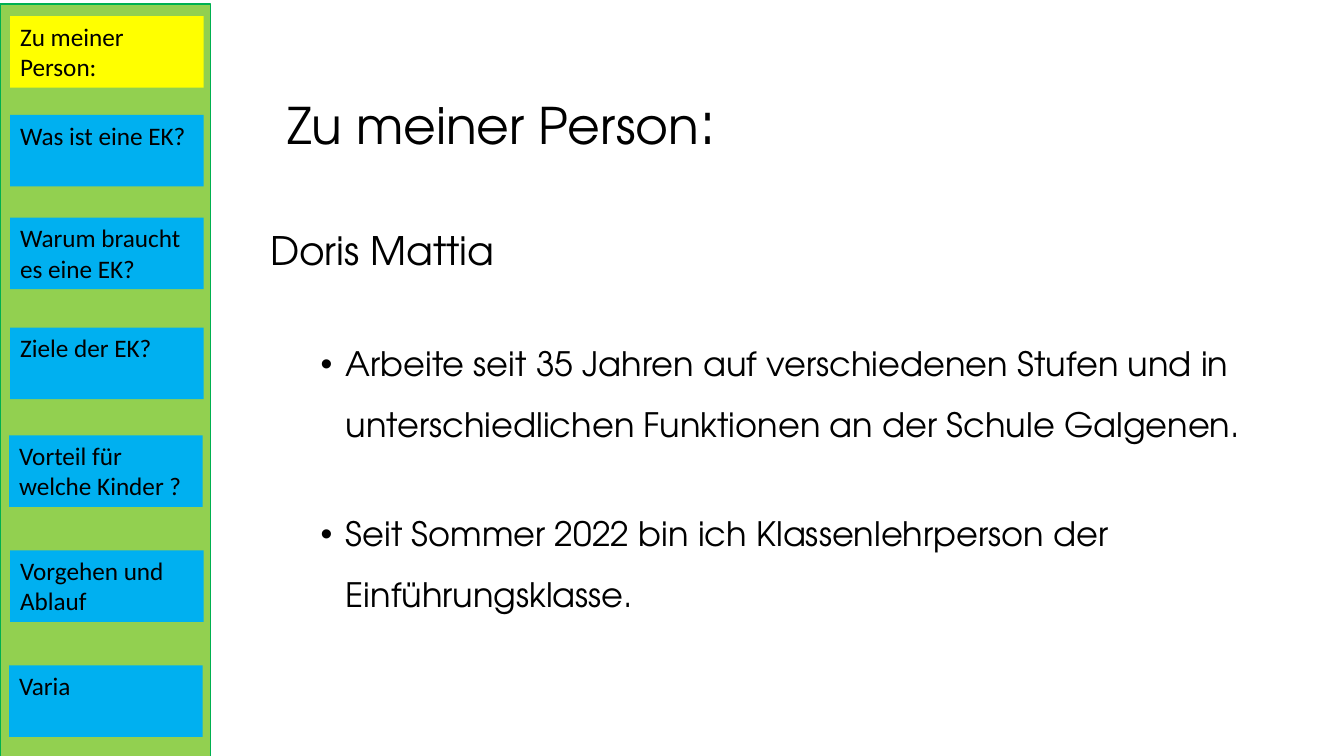
"""Builds the slide that introduces the speaker beside a navigation bar."""
import lxml.etree
import pptx
import pptx.dml.color
import pptx.enum.shapes
import pptx.enum.text
import pptx.oxml.ns
import pptx.util

Inches = pptx.util.Inches
Pt = pptx.util.Pt
RGBColor = pptx.dml.color.RGBColor
ANCHOR = pptx.enum.text.MSO_ANCHOR

BLACK = RGBColor(0x00, 0x00, 0x00)
GREEN = RGBColor(0x92, 0xD0, 0x50)
DARK_GREEN = RGBColor(0x00, 0xB0, 0x50)
YELLOW = RGBColor(0xFF, 0xFF, 0x00)
BLUE = RGBColor(0x00, 0xB0, 0xF0)

HEADING_FONT = "TeX Gyre Adventor"
NAV_FONT = "Calibri"

NAV_ITEMS = [
    ("Zu meiner Person:", 0.1, 0.16),
    ("Was ist eine EK?", 0.1, 1.14),
    ("Warum braucht es eine EK?", 0.1, 2.16),
    ("Ziele der EK?", 0.1, 3.25),
    ("Vorteil für welche Kinder ?", 0.09, 4.32),
    ("Vorgehen und Ablauf", 0.1, 5.46),
    ("Varia", 0.09, 6.6),
]
POINTS = [
    "Arbeite seit 35 Jahren auf verschiedenen Stufen und in "
    "unterschiedlichen Funktionen an der Schule Galgenen.",
    "Seit Sommer 2022 bin ich Klassenlehrperson der Einführungsklasse.",
]


def add_run(p, text, size=18, font=HEADING_FONT, color=BLACK):
    """Append formatted text to a paragraph."""
    r = p.add_run()
    r.text = text
    r.font.size = Pt(size)
    r.font.name = font
    r.font.color.rgb = color


def format_paragraph(p, level=0, spacing=1.0, before=0, bullet=None, left=0, hanging=0):
    """Set level, spacing, indents and bullet of a left-aligned paragraph."""
    p.alignment = pptx.enum.text.PP_ALIGN.LEFT
    p.level = level
    p.line_spacing = spacing
    p.space_before = Pt(before)
    pPr = p._p.get_or_add_pPr()
    pPr.set("marL", str(Inches(left)))
    pPr.set("indent", str(-Inches(hanging)))
    if bullet:
        font = lxml.etree.SubElement(pPr, pptx.oxml.ns.qn("a:buFont"))
        font.set("typeface", "Arial")
        char = lxml.etree.SubElement(pPr, pptx.oxml.ns.qn("a:buChar"))
        char.set("char", bullet)
    else:
        lxml.etree.SubElement(pPr, pptx.oxml.ns.qn("a:buNone"))


def prepare_frame(sp, anchor=ANCHOR.TOP):
    """Return the wrapping, fixed-size text frame of a shape."""
    tf = sp.text_frame
    tf.word_wrap = True
    tf.auto_size = pptx.enum.text.MSO_AUTO_SIZE.NONE
    tf.vertical_anchor = anchor
    return tf


def place(sp, left, top, width, height):
    """Move and size a shape in inches."""
    sp.left, sp.top = Inches(left), Inches(top)
    sp.width, sp.height = Inches(width), Inches(height)


def add_rect(s, left, top, width, height, fill, line=None):
    """Add a flat rectangle."""
    sp = s.shapes.add_shape(
        pptx.enum.shapes.MSO_SHAPE.RECTANGLE,
        Inches(left), Inches(top), Inches(width), Inches(height),
    )
    sp.shadow.inherit = False
    sp.fill.solid()
    sp.fill.fore_color.rgb = fill
    if line is None:
        sp.line.fill.background()
    else:
        sp.line.color.rgb = line
        sp.line.width = Pt(1)
    return sp


def fill_title(sp):
    """Write the slide title."""
    place(sp, 2.58, 0.51, 9.84, 1.45)
    p = prepare_frame(sp, ANCHOR.MIDDLE).paragraphs[0]
    format_paragraph(p, spacing=0.9)
    for text, size in ((" ", 44), ("Zu meiner Person", 36), (":", 44)):
        add_run(p, text, size=size)


def fill_body(sp):
    """Write the speaker's name and the bulleted points."""
    place(sp, 2.58, 1.5, 9.84, 5.26)
    tf = prepare_frame(sp)
    tf.margin_top = Inches(0.8)
    p = tf.paragraphs[0]
    format_paragraph(p, spacing=0.9)
    add_run(p, "Doris Mattia", size=28)
    for text in POINTS:
        p = tf.add_paragraph()
        format_paragraph(p, level=1, spacing=1.5, before=35, bullet="•", left=0.75, hanging=0.25)
        add_run(p, text, size=24)


def add_navigation(s):
    """Add the side bar with the current topic highlighted."""
    add_rect(s, 0, 0.04, 2.09, 7.5, GREEN, line=DARK_GREEN)
    for i, (text, left, top) in enumerate(NAV_ITEMS):
        sp = add_rect(s, left, top, 1.92, 0.71, BLUE if i else YELLOW)
        p = prepare_frame(sp).paragraphs[0]
        format_paragraph(p)
        add_run(p, text, font=NAV_FONT)


def main():
    """Build and save the slide."""
    prs = pptx.Presentation()
    prs.slide_width, prs.slide_height = Inches(13.33), Inches(7.5)
    s = prs.slides.add_slide(prs.slide_layouts[1])
    fill_title(s.shapes.title)
    fill_body(s.placeholders[1])
    add_navigation(s)
    prs.save("out.pptx")


if __name__ == "__main__":
    main()
